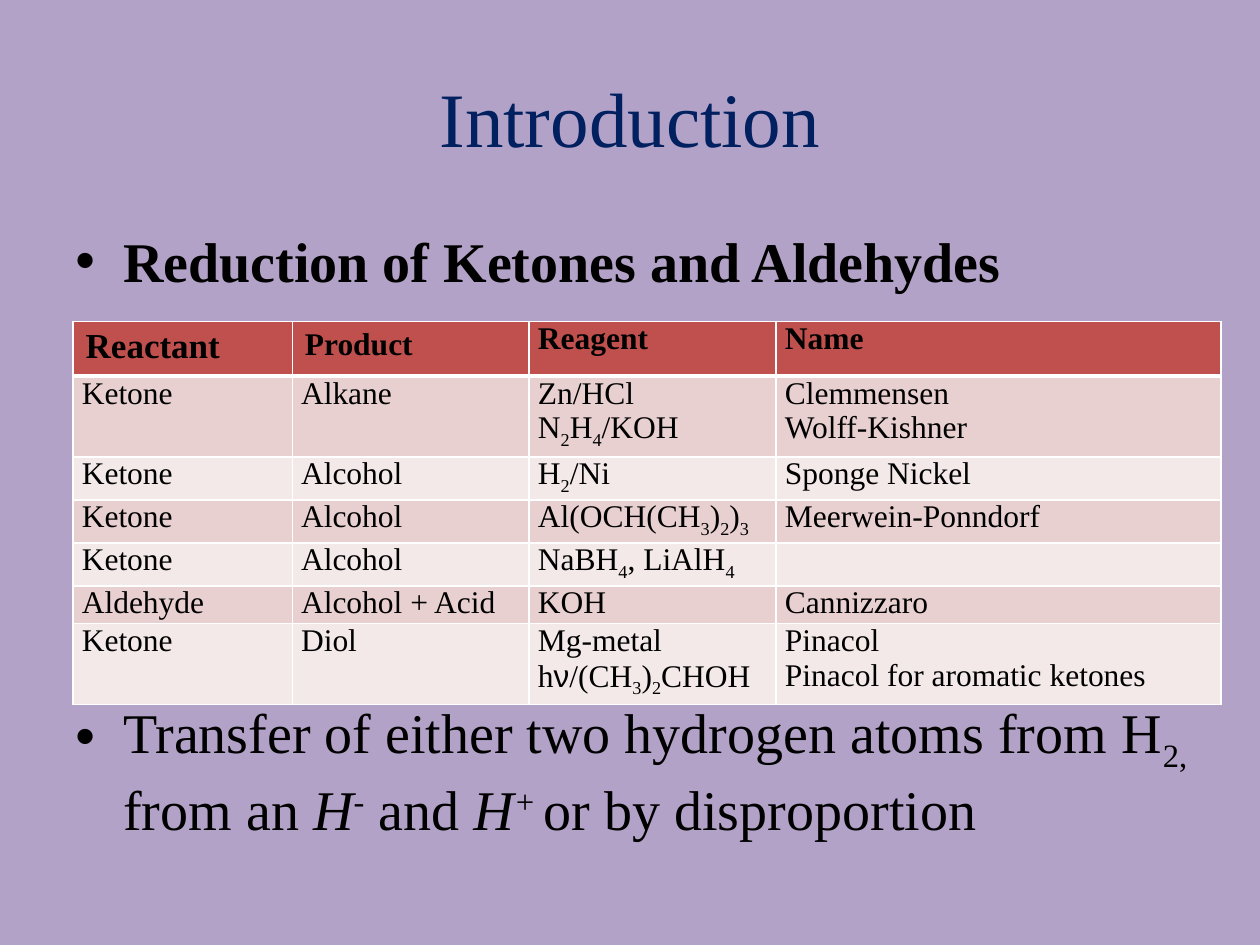
import lxml.etree
import pptx
import pptx.dml.color
import pptx.enum.text
import pptx.oxml.ns
import pptx.util

RGB = pptx.dml.color.RGBColor
INCH = pptx.util.Inches
PT = pptx.util.Pt
ANCHOR = pptx.enum.text.MSO_ANCHOR
ALIGN = pptx.enum.text.PP_ALIGN

LILAC = RGB(0xB3, 0xA2, 0xC7)
NAVY = RGB(0x00, 0x20, 0x60)
BLACK = RGB(0, 0, 0)
RED = RGB(0xC0, 0x50, 0x4D)
BANDS = RGB(0xE8, 0xD0, 0xD0), RGB(0xF4, 0xE9, 0xE9)
WHITE = "FFFFFF"
FACE = "Times New Roman"

WIDE, HIGH = 10, 7.5
LEFT = 0.05 * WIDE
COLS = [1.74, 1.88, 1.96, 3.53]
ROWS = [0.41, 0.59, 0.31, 0.31, 0.31, 0.3, 0.63]

# Runs are parted by |; a run opens with _ (sub), ^ (super), * (italic)
# or @ (Arial). Paragraphs are parted by \n, lines within one by \v.
HEAD = ["Reactant", "Product", "Reagent", "Name"]
BODY = [
    ["Ketone", "Alkane", "Zn/HCl\nN|_2|H|_4|/KOH", "Clemmensen \vWolff-Kishner"],
    ["Ketone", "Alcohol", "H|_2|/Ni", "Sponge Nickel"],
    ["Ketone", "Alcohol", "Al(OCH(CH|_3|)|_2|)|_3", "Meerwein-Ponndorf"],
    ["Ketone", "Alcohol", "NaBH|_4|, LiAlH|_4", ""],
    ["Aldehyde", "Alcohol + Acid", "KOH", "Cannizzaro"],
    ["Ketone", "Diol", "Mg-metal\nh|@ν|/(CH|_3|)|_2|CHOH",
     "Pinacol\nPinacol for aromatic ketones"],
]
POINT = ("Transfer of either two hydrogen atoms from H|_2, |from an |*H|*^-"
         "| and |*H|*^+ |or by disproportion")


def add_xml(parent, tag, **attrs):
    return lxml.etree.SubElement(parent, pptx.oxml.ns.qn(tag), **attrs)


def add_run(para, piece):
    body = piece.lstrip("*_^@")
    marks = piece[:len(piece) - len(body)]
    run = para.add_run()
    run.text = body
    if "*" in marks:
        run.font.italic = True
    if "@" in marks:
        run.font.name = "Arial"
    for mark, base in (("_", "-25000"), ("^", "30000")):
        if mark in marks:
            run._r.get_or_add_rPr().set("baseline", base)


def write(frame, text, size, color=BLACK, bold=False):
    for i, block in enumerate(text.split("\n")):
        para = frame.add_paragraph() if i else frame.paragraphs[0]
        font = para.font
        font.name, font.size, font.bold = FACE, PT(size), bold
        font.color.rgb = color
        for j, line in enumerate(block.split("\v")):
            if j:
                para.add_line_break()
            for piece in filter(None, line.split("|")):
                add_run(para, piece)


def add_text(slide, top, wide, high):
    box = slide.shapes.add_textbox(INCH(LEFT), INCH(top), INCH(wide), INCH(high))
    box.text_frame.word_wrap = True
    return box.text_frame


def add_point(slide, top, high, text, bold=False):
    frame = add_text(slide, top, 9.17, high)
    para = frame.paragraphs[0]
    para.space_before = PT(4)
    props = para._p.get_or_add_pPr()
    props.set("marL", str(INCH(0.38)))
    props.set("indent", str(-INCH(0.38)))
    add_xml(props, "a:buFont", typeface="Arial")
    add_xml(props, "a:buChar", char="•")
    write(frame, text, 32, bold=bold)


def add_edges(cell, low):
    props = cell._tc.get_or_add_tcPr()
    for side, width in zip("LRTB", (1, 1, 1, low)):
        line = add_xml(props, "a:ln" + side, w=str(PT(width)))
        add_xml(add_xml(line, "a:solidFill"), "a:srgbClr", val=WHITE)


def add_grid(slide):
    shape = slide.shapes.add_table(
        len(ROWS), len(COLS), INCH(0.58), INCH(2.55),
        INCH(sum(COLS)), INCH(sum(ROWS)))
    table = shape.table
    table.first_row = table.horz_banding = False
    for col, wide in zip(table.columns, COLS):
        col.width = INCH(wide)
    for row, high in zip(table.rows, ROWS):
        row.height = INCH(high)
    for r, texts in enumerate([HEAD] + BODY):
        for c, text in enumerate(texts):
            cell = table.cell(r, c)
            top = r == 0
            add_edges(cell, 3 if top else 1)
            cell.fill.solid()
            cell.fill.fore_color.rgb = RED if top else BANDS[(r - 1) % 2]
            # The first two headings keep the default margins
            if not (top and c < 2):
                cell.margin_left = cell.margin_right = INCH(0.07)
                cell.margin_top = cell.margin_bottom = 0
            size = 20 if top and c == 0 else 18
            write(cell.text_frame, text, size, bold=top)


def main():
    deck = pptx.Presentation()
    deck.slide_width, deck.slide_height = INCH(WIDE), INCH(HIGH)
    slide = deck.slides.add_slide(deck.slide_layouts[6])
    slide.background.fill.solid()
    slide.background.fill.fore_color.rgb = LILAC

    # Title
    title = add_text(slide, 0.04 * HIGH, 0.9 * WIDE, 1.25)
    title.vertical_anchor = ANCHOR.MIDDLE
    title.paragraphs[0].alignment = ALIGN.CENTER
    write(title, "Introduction", 44, NAVY)

    # Points above and below the table
    add_point(slide, 1.75, 0.7, "Reduction of Ketones and Aldehydes", True)
    add_point(slide, 5.49, 1.5, POINT)
    add_grid(slide)

    deck.save("out.pptx")


if __name__ == "__main__":
    main()
